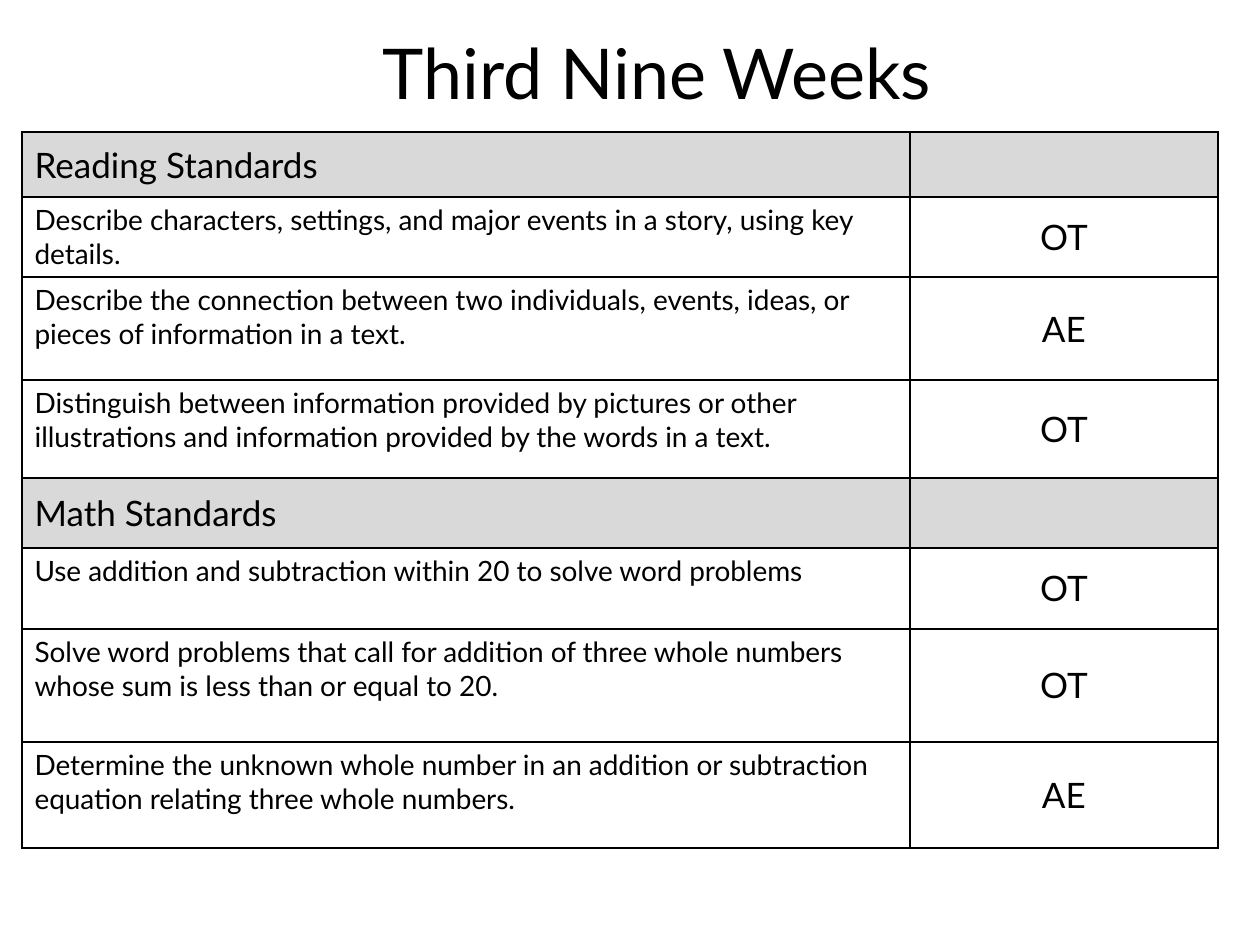
from lxml.etree import SubElement
from pptx import Presentation
from pptx.dml.color import RGBColor
from pptx.enum.text import MSO_ANCHOR, MSO_AUTO_SIZE, PP_ALIGN
from pptx.oxml.ns import qn
from pptx.util import Emu, Pt

FONT = "Lato"
BLACK, WHITE, GRAY = "000000", "FFFFFF", "D9D9D9"
COLUMN_WIDTHS = (888, 308)
STANDARDS = (
    (65, "Reading Standards", ""),
    (80, "Describe characters, settings, and major events in a story, using key details.", "OT"),
    (103, "Describe the connection between two individuals, events, ideas, or pieces of information in a text.", "AE"),
    (98, "Distinguish between information provided by pictures or other illustrations and information provided by the words in a text.", "OT"),
    (70, "Math Standards", ""),
    (81, "Use addition and subtraction within 20 to solve word problems", "OT"),
    (113, "Solve word problems that call for addition of three whole numbers whose sum is less than or equal to 20.", "OT"),
    (106, "Determine the unknown whole number in an addition or subtraction equation relating three whole numbers.", "AE"),
)


def px(length):
    """Turn pixels, 126 to the inch, into EMU."""
    return Emu(round(length * 914400 / 126))


def color(value):
    """Turn a hex string into a colour."""
    return RGBColor.from_string(value)


def write(frame, text, size, align):
    """Write one formatted paragraph into a text frame."""
    para = frame.paragraphs[0]
    para.text = text
    para.alignment = align
    para.font.name = FONT
    para.font.size = Pt(size)
    para.font.color.rgb = color(BLACK)


def add_borders(cell):
    """Draw a one-point black line on each side of a cell."""
    properties = cell._tc.get_or_add_tcPr()
    for index, side in enumerate(("a:lnL", "a:lnR", "a:lnT", "a:lnB")):
        line = SubElement(properties, qn(side), w=str(Pt(1)))
        fill = SubElement(line, qn("a:solidFill"))
        SubElement(fill, qn("a:srgbClr"), val=BLACK)
        properties.remove(line)
        properties.insert(index, line)


def fill_cell(cell, text, size, align, anchor, shade):
    """Set the text, fill and borders of a cell."""
    cell.fill.solid()
    cell.fill.fore_color.rgb = color(shade)
    add_borders(cell)
    cell.vertical_anchor = anchor
    if text:
        write(cell.text_frame, text, size, align)


def place_title(page, left, top, width, height):
    """Place the page title in its placeholder."""
    title = page.shapes.title
    title.left, title.top, title.width, title.height = map(px, (left, top, width, height))
    frame = title.text_frame
    frame.auto_size = MSO_AUTO_SIZE.NONE
    frame.vertical_anchor = MSO_ANCHOR.MIDDLE
    write(frame, "Third Nine Weeks", 40, PP_ALIGN.CENTER)


def place_standards(page, left, top):
    """Place the table of standards and their marks."""
    width = sum(COLUMN_WIDTHS)
    height = sum(row[0] for row in STANDARDS)
    table = page.shapes.add_table(
        len(STANDARDS), len(COLUMN_WIDTHS), px(left), px(top), px(width), px(height)
    ).table
    table.first_row = table.horz_banding = False
    for column, column_width in zip(table.columns, COLUMN_WIDTHS):
        column.width = px(column_width)
    for row, (row_height, standard, mark) in zip(table.rows, STANDARDS):
        row.height = px(row_height)
        shade = WHITE if mark else GRAY
        size = 16 if mark else 20
        anchor = MSO_ANCHOR.TOP if mark else MSO_ANCHOR.MIDDLE
        fill_cell(row.cells[0], standard, size, PP_ALIGN.LEFT, anchor, shade)
        fill_cell(row.cells[1], mark, 20, PP_ALIGN.CENTER, MSO_ANCHOR.MIDDLE, shade)


def main():
    """Build the deck and save it."""
    deck = Presentation()
    deck.slide_width, deck.slide_height = px(1260), px(945)
    page = deck.slides.add_slide(deck.slide_layouts[5])
    place_standards(page, 22, 132)
    place_title(page, 197, 23, 920, 97)
    deck.save("out.pptx")


if __name__ == "__main__":
    main()
